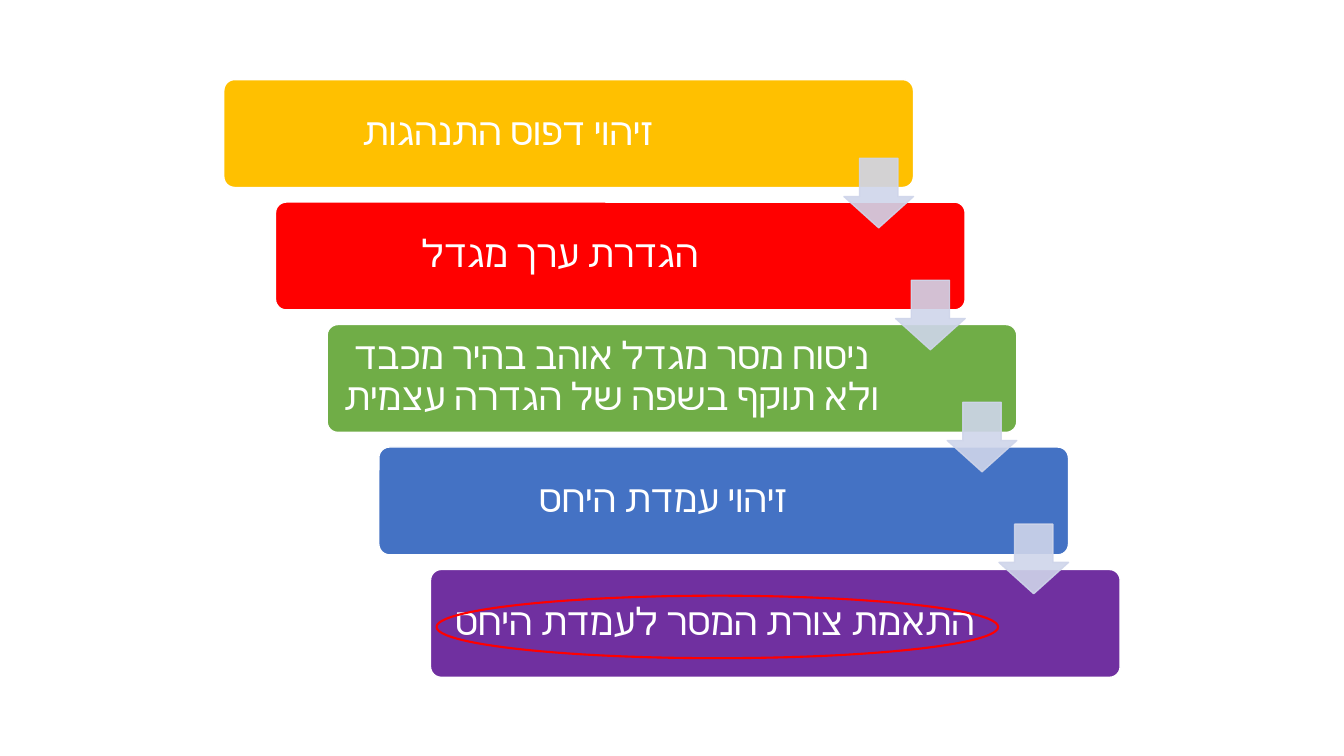
"""Build a slide with a descending staircase of five message-forming steps."""
import pptx
import pptx.dml.color
import pptx.enum.shapes
import pptx.enum.text
import pptx.oxml.ns
import pptx.util
from lxml import etree

Inches = pptx.util.Inches
Pt = pptx.util.Pt
SHAPE = pptx.enum.shapes.MSO_SHAPE
COLORS = {"gold": "FFC000", "red": "FF0000", "green": "70AD47", "blue": "4472C4",
          "purple": "7030A0", "white": "FFFFFF", "arrow": "CFD5EA"}
STEPS = [
    ("gold", "זיהוי דפוס התנהגות"),
    ("red", "הגדרת ערך מגדל"),
    ("green", "ניסוח מסר מגדל אוהב בהיר מכבד ולא תוקף בשפה של הגדרה עצמית"),
    ("blue", "זיהוי עמדת היחס"),
    ("purple", "התאמת צורת המסר לעמדת היחס"),
]
LEFT, TOP = 2.22, 0.79
STEP_X, STEP_Y = 0.5125, 1.215
BAR_W, BAR_H = 6.84, 1.07
LABEL_W, LABEL_H, LABEL_PAD = 5.58, 1, 0.03
ARROW = 0.69


def paint(color_format, color, opacity=100):
    """Set a solid colour, with its opacity in percent."""
    color_format.rgb = pptx.dml.color.RGBColor.from_string(COLORS[color])
    if opacity < 100:
        rgb = color_format._xFill.find(pptx.oxml.ns.qn("a:srgbClr"))
        etree.SubElement(rgb, pptx.oxml.ns.qn("a:alpha"), val=str(opacity * 1000))


def add_preset(kind, left, top, width, height, fill, line, line_width=1, opacity=100):
    """Add a preset shape without shadow; fill None leaves it hollow."""
    preset = slide.shapes.add_shape(
        kind, Inches(left), Inches(top), Inches(width), Inches(height))
    preset.shadow.inherit = False
    if fill:
        preset.fill.solid()
        paint(preset.fill.fore_color, fill, opacity)
    else:
        preset.fill.background()
    preset.line.width = Pt(line_width)
    preset.line.fill.solid()
    paint(preset.line.fill.fore_color, line, opacity)
    return preset


prs = pptx.Presentation()
prs.slide_width, prs.slide_height = Inches(13.33), Inches(7.5)
slide = prs.slides.add_slide(prs.slide_layouts[6])

for row, (color, wording) in enumerate(STEPS):
    left, top = LEFT + row * STEP_X, TOP + row * STEP_Y
    bar = add_preset(SHAPE.ROUNDED_RECTANGLE, left, top, BAR_W, BAR_H, color, "white")
    bar.adjustments[0] = 0.1

    label = slide.shapes.add_textbox(
        Inches(left + LABEL_PAD), Inches(top + LABEL_PAD), Inches(LABEL_W), Inches(LABEL_H))
    frame = label.text_frame
    frame.word_wrap = True
    frame.vertical_anchor = pptx.enum.text.MSO_ANCHOR.MIDDLE
    frame.margin_left = frame.margin_right = Inches(0.11)
    frame.margin_top = frame.margin_bottom = Inches(0.11)
    paragraph = frame.paragraphs[0]
    paragraph.alignment = pptx.enum.text.PP_ALIGN.CENTER
    paragraph.line_spacing = 0.9
    paragraph._p.get_or_add_pPr().set("rtl", "1")
    run = paragraph.add_run()
    run.text = wording
    run.font.size = Pt(27)
    run.font.name = "Calibri"
    paint_target = run.font.color
    paint_target.rgb = pptx.dml.color.RGBColor.from_string(COLORS["white"])
    etree.SubElement(run._r.get_or_add_rPr(), pptx.oxml.ns.qn("a:cs"), typeface="Calibri")

for row in range(len(STEPS) - 1):
    arrow = add_preset(
        SHAPE.DOWN_ARROW, LEFT + row * STEP_X + BAR_W - ARROW, 1.57 + row * 1.21,
        ARROW, ARROW, "arrow", "arrow", opacity=90)
    arrow.adjustments[0] = 0.55
    arrow.adjustments[1] = 0.45

add_preset(SHAPE.OVAL, 4.33, 5.91, 5.57, 0.62, None, "red", line_width=1.5)

prs.save("out.pptx")
